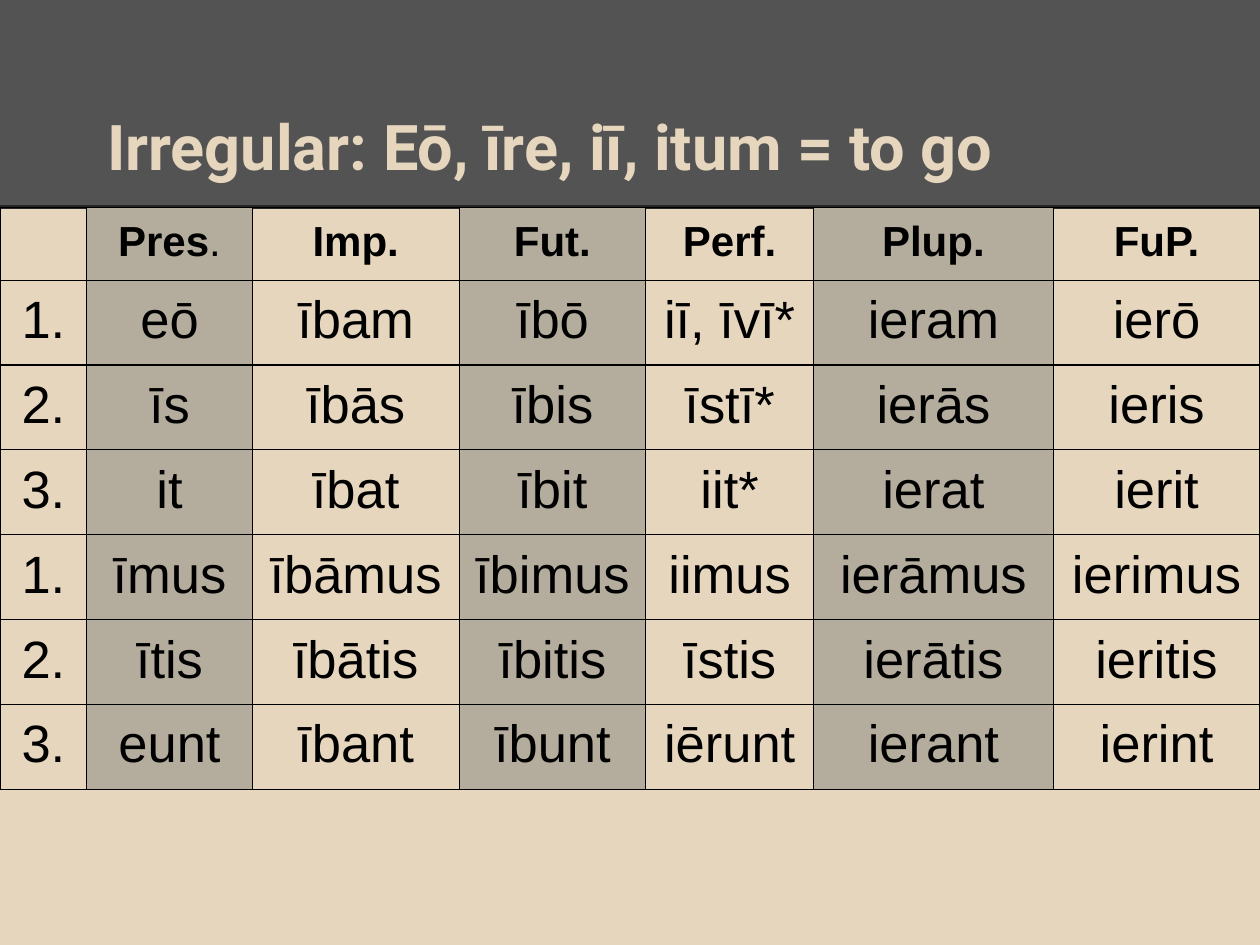
import pptx
import pptx.dml.color
import pptx.enum.shapes
import pptx.enum.text
import pptx.oxml
import pptx.oxml.ns
import pptx.util
from pptx.util import Cm

SAND, SLATE, STONE, BLACK = "E6D6BD", "535353", "B4AD9E", "000000"
WIDTHS = [1.75, 3.33, 4.17, 3.76, 3.38, 4.83, 4.16]
HEADER_HEIGHT, ROW_HEIGHT = 1.43, 1.69
CONJUGATION = [
    ["", "Pres.", "Imp.", "Fut.", "Perf.", "Plup.", "FuP."],
    ["1.", "eō", "ībam", "ībō", "iī, īvī*", "ieram", "ierō"],
    ["2.", "īs", "ībās", "ībis", "īstī*", "ierās", "ieris"],
    ["3.", "it", "ībat", "ībit", "iit*", "ierat", "ierit"],
    ["1.", "īmus", "ībāmus", "ībimus", "iimus", "ierāmus", "ierimus"],
    ["2.", "ītis", "ībātis", "ībitis", "īstis", "ierātis", "ieritis"],
    ["3.", "eunt", "ībant", "ībunt", "iērunt", "ierant", "ierint"],
]


def rgb(value):
    """Return the colour for a hex string."""
    return pptx.dml.color.RGBColor.from_string(value)


def style_run(r, font, size, color, bold):
    """Format one run."""
    r.font.name, r.font.size, r.font.bold = font, pptx.util.Pt(size), bold
    r.font.color.rgb = rgb(color)


def add_borders(cell):
    """Draw a thin black line on all four sides of a cell."""
    pr = cell._tc.get_or_add_tcPr()
    for i, side in enumerate(("lnL", "lnR", "lnT", "lnB")):
        pr.insert(i, pptx.oxml.parse_xml(
            f'<a:{side} {pptx.oxml.ns.nsdecls("a")} w="9525"><a:solidFill>'
            f'<a:srgbClr val="{BLACK}"/></a:solidFill></a:{side}>'))


def add_header(s, left, top, width, height):
    """Add the dark band, its lower rule and the title."""
    band = s.shapes.add_shape(pptx.enum.shapes.MSO_SHAPE.RECTANGLE,
                              left, top, width, height)
    band.shadow.inherit = False
    band.fill.solid()
    band.fill.fore_color.rgb = rgb(SLATE)
    band.line.fill.background()

    rule = s.shapes.add_connector(pptx.enum.shapes.MSO_CONNECTOR.STRAIGHT,
                                  left, top + height, left + width, top + height)
    rule.line.color.rgb = rgb("262626")
    rule.line.width = pptx.util.Pt(2.25)
    rule._element.spPr.append(pptx.oxml.parse_xml(
        f'<a:effectLst {pptx.oxml.ns.nsdecls("a")}/>'))

    sp = s.shapes.add_textbox(left + Cm(1.27), top + Cm(0.76),
                              width - Cm(2.54), height - Cm(0.99))
    tf = sp.text_frame
    tf.word_wrap = True
    tf.vertical_anchor = pptx.enum.text.MSO_ANCHOR.BOTTOM
    tf.margin_left = tf.margin_right = tf.margin_top = tf.margin_bottom = Cm(0.25)
    tf.text = "Irregular: Eō, īre, iī, itum = to go"
    p = tf.paragraphs[0]
    p._p.get_or_add_pPr().set("indent", str(Cm(0.64)))
    style_run(p.runs[0], "Roboto", 36, SAND, True)


def fill_cell(cell, text, is_header, is_shaded):
    """Write and format one table cell."""
    cell.margin_left = cell.margin_right = Cm(0.25)
    cell.margin_top = cell.margin_bottom = Cm(0.22)
    if is_shaded:
        cell.fill.solid()
        cell.fill.fore_color.rgb = rgb(STONE)
    else:
        cell.fill.background()
    add_borders(cell)
    p = cell.text_frame.paragraphs[0]
    p.alignment = pptx.enum.text.PP_ALIGN.CENTER
    parts = ["Pres", "."] if text == "Pres." else [text] if text else []
    for part in parts:
        r = p.add_run()
        r.text = part
        style_run(r, "Arial", 24 if is_header else 30, BLACK,
                  is_header and part != ".")


def add_conjugation(s, left, top, width):
    """Add the table of tenses and persons."""
    height = Cm(HEADER_HEIGHT + ROW_HEIGHT * (len(CONJUGATION) - 1))
    table = s.shapes.add_table(len(CONJUGATION), len(WIDTHS),
                               left, top, width, height).table
    table.horz_banding = table.first_row = False
    for column, share in zip(table.columns, WIDTHS):
        column.width = int(width * share / sum(WIDTHS))
    for i, words in enumerate(CONJUGATION):
        table.rows[i].height = Cm(ROW_HEIGHT if i else HEADER_HEIGHT)
        for j, text in enumerate(words):
            fill_cell(table.cell(i, j), text, i == 0, j % 2 == 1)


def main():
    """Build and save the slide."""
    prs = pptx.Presentation()
    prs.slide_width, prs.slide_height = Cm(25.4), Cm(19.05)
    s = prs.slides.add_slide(prs.slide_layouts[6])
    s.background.fill.solid()
    s.background.fill.fore_color.rgb = rgb(SAND)
    add_header(s, 0, 0, prs.slide_width, Cm(4.17))
    add_conjugation(s, 0, Cm(4.19), prs.slide_width)
    prs.save("out.pptx")


if __name__ == "__main__":
    main()
